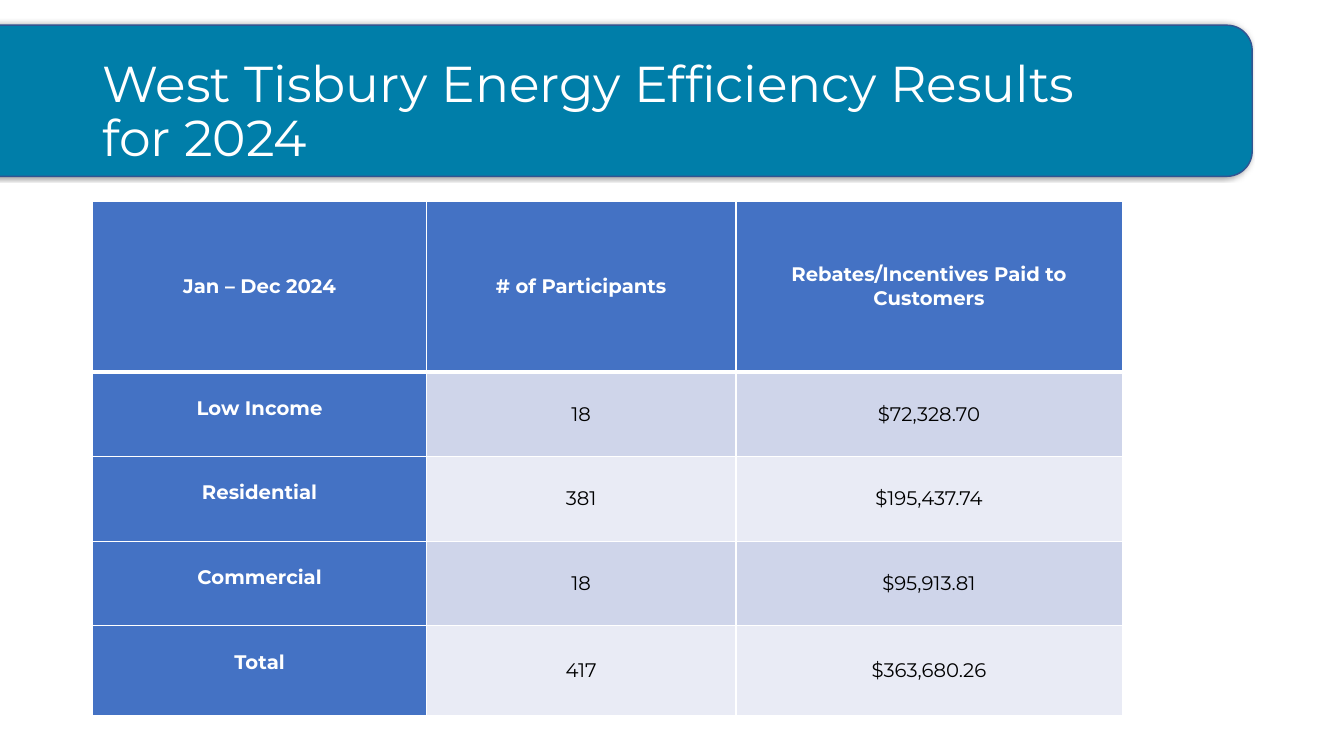
"""Build the energy efficiency results slide."""
from lxml import etree
from pptx import Presentation
from pptx.dml.color import RGBColor
from pptx.enum.shapes import MSO_SHAPE
from pptx.enum.text import MSO_ANCHOR, PP_ALIGN
from pptx.oxml import parse_xml
from pptx.util import Inches, Pt

NS = 'xmlns:a="http://schemas.openxmlformats.org/drawingml/2006/main"'
FONT = "Montserrat"
WHITE = RGBColor(0xFF, 0xFF, 0xFF)
BLACK = RGBColor(0x00, 0x00, 0x00)
TEAL = RGBColor(0x00, 0x7E, 0xA9)
EDGE = RGBColor(0x32, 0x54, 0x91)
BLUE = RGBColor(0x44, 0x72, 0xC4)
BANDS = [RGBColor(0xE9, 0xEB, 0xF5), RGBColor(0xCF, 0xD5, 0xEA)]

WIDTHS = [3.31, 3.07, 3.83]
HEIGHTS = [1.69, 0.84, 0.84, 0.84, 0.89]
ROWS = [
    ["Jan – Dec 2024", "# of Participants", "Rebates/Incentives Paid to Customers"],
    ["Low Income", "18", "$72,328.70"],
    ["Residential", "381", "$195,437.74"],
    ["Commercial", "18", "$95,913.81"],
    ["Total", "417", "$363,680.26"],
]


def add_run(para, text, size, color, bold=False):
    run = para.add_run()
    run.text = text
    run.font.name = FONT
    run.font.size = Pt(size)
    run.font.bold = bold
    run.font.color.rgb = color


def add_edge(cell, side, width):
    line = etree.SubElement(cell._tc.get_or_add_tcPr(), f"{{{A}}}ln{side}", w=str(Pt(width)))
    fill = etree.SubElement(line, f"{{{A}}}solidFill")
    etree.SubElement(fill, f"{{{A}}}srgbClr", val=str(WHITE))


A = "http://schemas.openxmlformats.org/drawingml/2006/main"
prs = Presentation()
prs.slide_width, prs.slide_height = Inches(13.33), Inches(7.5)
slide = prs.slides.add_slide(prs.slide_layouts[6])

banner = slide.shapes.add_shape(
    MSO_SHAPE.ROUNDED_RECTANGLE, Inches(-0.35), Inches(0.25), Inches(12.77), Inches(1.5))
banner.fill.solid()
banner.fill.fore_color.rgb = TEAL
banner.line.color.rgb = EDGE
banner.line.width = Pt(1)
banner.shadow.inherit = False
shade = parse_xml(
    f'<a:outerShdw {NS} blurRad="{Pt(4)}" dist="{Pt(3)}" dir="10800000" rotWithShape="0">'
    '<a:srgbClr val="000000"><a:alpha val="40000"/></a:srgbClr></a:outerShdw>')
banner._element.spPr.find(f"{{{A}}}effectLst").append(shade)

title = slide.shapes.add_textbox(Inches(0.92), Inches(0.4), Inches(11.5), Inches(1.45))
frame = title.text_frame
frame.word_wrap = True
frame.vertical_anchor = MSO_ANCHOR.MIDDLE
para = frame.paragraphs[0]
para.line_spacing = 0.9
add_run(para, "West Tisbury Energy Efficiency Results ", 36, WHITE)
para.add_line_break()
add_run(para, "for 2024", 36, WHITE)

table = slide.shapes.add_table(
    len(ROWS), len(WIDTHS), Inches(0.92), Inches(2), Inches(10.21), Inches(5.1)).table
for col, width in zip(table.columns, WIDTHS):
    col.width = Inches(width)
for r, (row, height) in enumerate(zip(ROWS, HEIGHTS)):
    table.rows[r].height = Inches(height)
    for c, text in enumerate(row):
        cell = table.cell(r, c)
        head = r == 0 or c == 0
        label = r > 0 and c == 0
        cell.margin_left = cell.margin_right = Inches(0.07)
        cell.margin_top = Inches(0.24 if label else 0)
        cell.margin_bottom = 0
        cell.vertical_anchor = MSO_ANCHOR.TOP if label else MSO_ANCHOR.MIDDLE
        for side in "LRTB":
            add_edge(cell, side, 3 if (r, side) in [(0, "B"), (1, "T")] else 1)
        cell.fill.solid()
        cell.fill.fore_color.rgb = BLUE if head else BANDS[r % 2]
        para = cell.text_frame.paragraphs[0]
        para.alignment = PP_ALIGN.CENTER
        add_run(para, text, 14, WHITE if head else BLACK, head)

prs.save("out.pptx")
